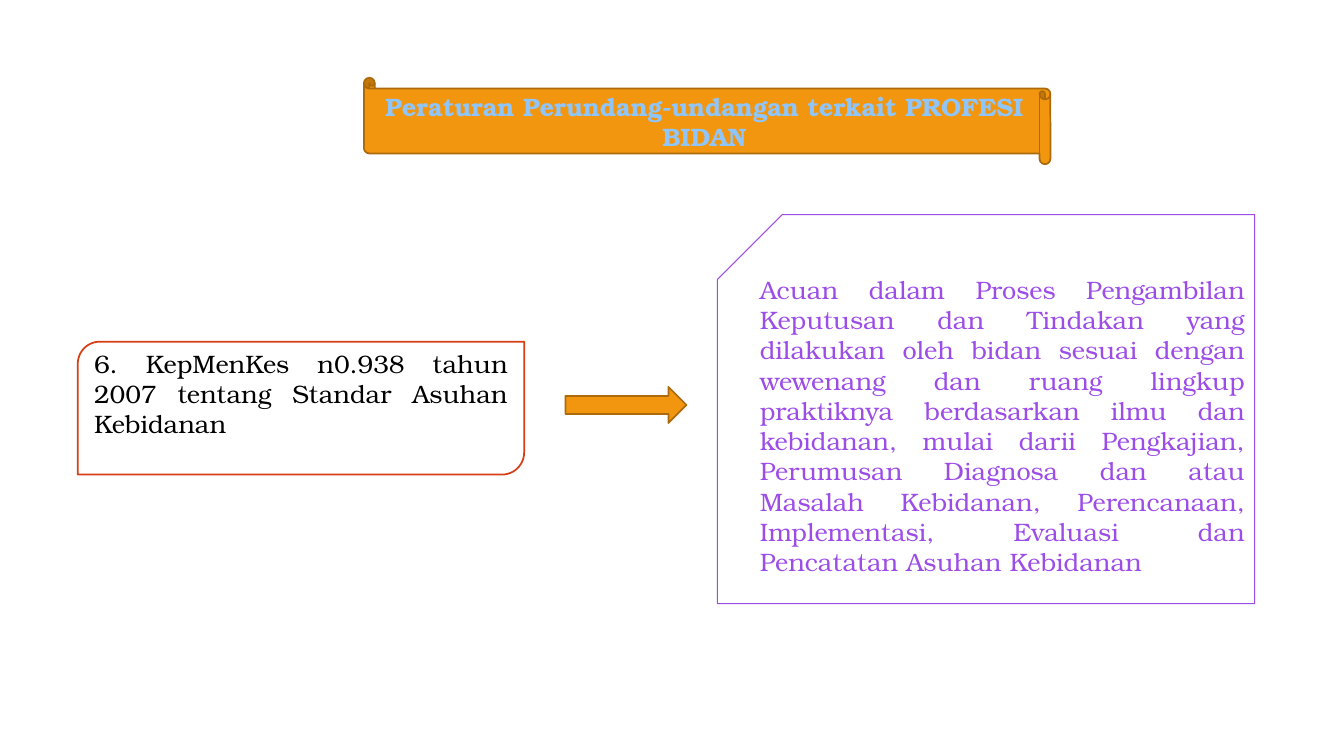
from pptx import Presentation
from pptx.dml.color import RGBColor
from pptx.enum.shapes import MSO_SHAPE
from pptx.enum.text import MSO_ANCHOR, PP_ALIGN
from pptx.oxml.ns import qn
from pptx.util import Cm, Pt

FONT = "TeX Gyre Bonum"
COLOURS = {
    "orange": "F3960F",
    "brown": "AC6A0B",
    "sky": "8FC5F8",
    "white": "FFFFFF",
    "red": "D63E15",
    "black": "000000",
    "violet": "9D4DE7",
}


def colour(name):
    return RGBColor.from_string(COLOURS[name])


def add_panel(slide, preset, box, fill, outline, weight=1.25):
    panel = slide.shapes.add_shape(preset, *(Cm(length) for length in box))
    panel.shadow.inherit = False
    if fill:
        panel.fill.solid()
        panel.fill.fore_color.rgb = colour(fill)
    else:
        panel.fill.background()
    panel.line.color.rgb = colour(outline)
    panel.line.width = Pt(weight)
    return panel


def mirror(panel):
    panel.rotation = 180
    panel._element.spPr.find(qn("a:xfrm")).set("flipV", "1")


def write(panel, wording, ink, align=PP_ALIGN.JUSTIFY, bold=False,
          anchor=MSO_ANCHOR.MIDDLE):
    frame = panel.text_frame
    frame.word_wrap = True
    frame.vertical_anchor = anchor
    paragraph = frame.paragraphs[0]
    paragraph.alignment = align
    run = paragraph.add_run()
    run.text = wording
    run.font.name = FONT
    run.font.size = Pt(18)
    run.font.bold = bold
    run.font.color.rgb = colour(ink)


def main():
    deck = Presentation()
    deck.slide_width, deck.slide_height = Cm(33.87), Cm(19.05)
    slide = deck.slides.add_slide(deck.slide_layouts[6])

    title = add_panel(slide, MSO_SHAPE.HORIZONTAL_SCROLL,
                      (9.17, 1.96, 17.3, 2.18), "orange", "brown")
    mirror(title)
    write(title, "Peraturan Perundang-undangan terkait PROFESI BIDAN", "sky",
          PP_ALIGN.CENTER, bold=True)

    regulation = add_panel(slide, MSO_SHAPE.ROUND_2_DIAG_RECTANGLE,
                           (1.96, 8.61, 11.25, 3.35), "white", "red")
    regulation.text_frame.margin_top = 0
    write(regulation,
          "6. KepMenKes n0.938 tahun 2007 tentang Standar Asuhan Kebidanan",
          "black", anchor=MSO_ANCHOR.TOP)

    add_panel(slide, MSO_SHAPE.RIGHT_ARROW,
              (14.25, 9.75, 3.05, 0.91), "orange", "brown")

    purpose = add_panel(slide, MSO_SHAPE.SNIP_1_RECTANGLE,
                        (18.08, 5.41, 13.54, 9.8), None, "violet", 0.75)
    mirror(purpose)
    write(purpose,
          "Acuan dalam Proses Pengambilan Keputusan dan Tindakan yang "
          "dilakukan oleh bidan sesuai dengan wewenang dan ruang lingkup "
          "praktiknya berdasarkan ilmu dan kebidanan, mulai darii "
          "Pengkajian, Perumusan Diagnosa dan atau Masalah Kebidanan, "
          "Perencanaan, Implementasi, Evaluasi dan Pencatatan Asuhan "
          "Kebidanan", "violet")

    deck.save("out.pptx")


if __name__ == "__main__":
    main()
